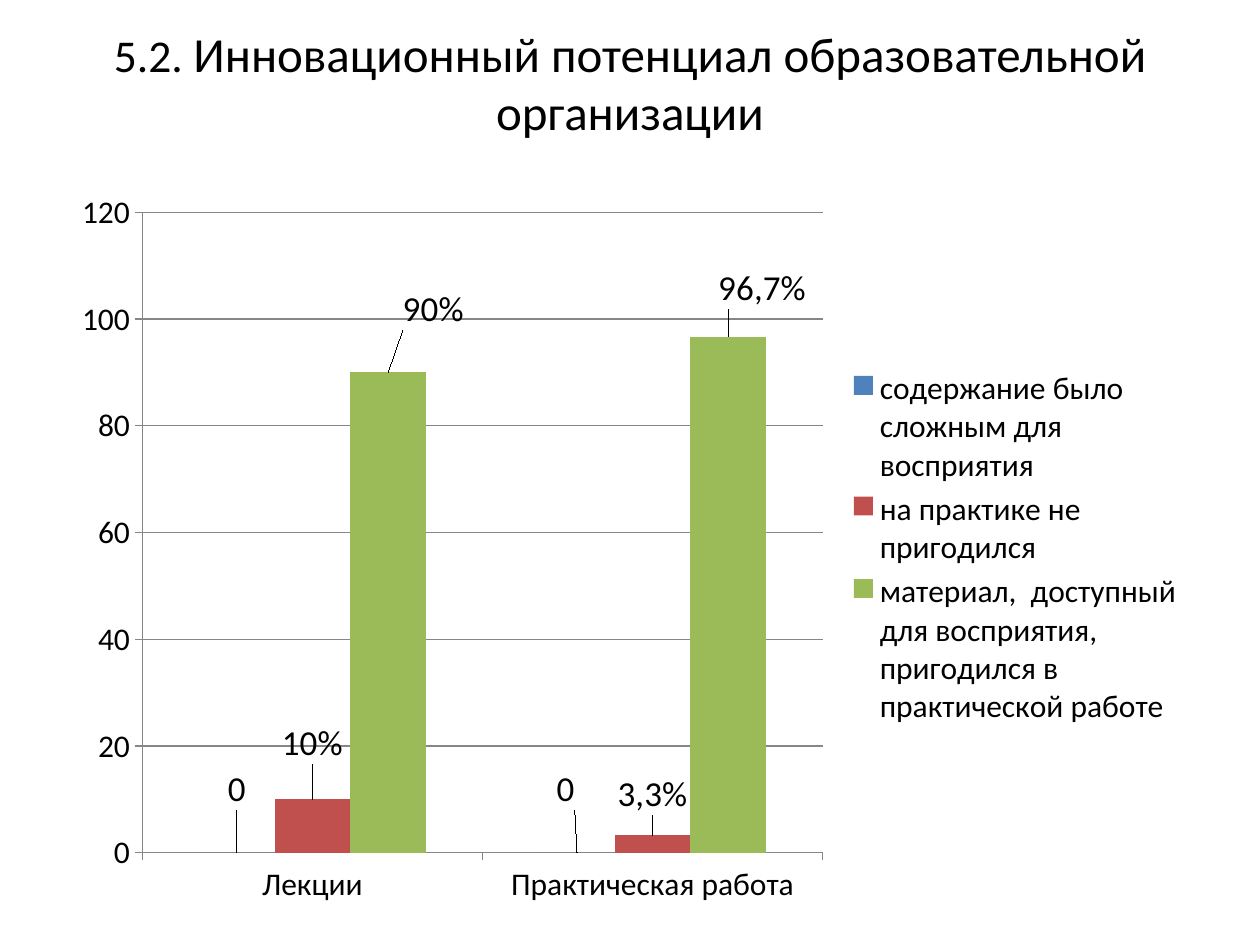
from dataclasses import dataclass

from lxml.etree import SubElement
from pptx import Presentation
from pptx.chart.data import CategoryChartData as ChartData
from pptx.dml.color import RGBColor as RGB
from pptx.enum.chart import XL_CHART_TYPE as Kind
from pptx.enum.chart import XL_LABEL_POSITION as Spot
from pptx.enum.chart import XL_LEGEND_POSITION as Side
from pptx.enum.chart import XL_TICK_MARK as Tick
from pptx.enum.text import MSO_ANCHOR as Anchor
from pptx.enum.text import PP_ALIGN as Align
from pptx.oxml.ns import qn
from pptx.util import Inches, Pt


@dataclass(frozen=True)
class Theme:
    font: str = "Calibri"
    ink: RGB = RGB(0, 0, 0)
    line: RGB = RGB(0x86, 0x86, 0x86)
    number: int = 26
    title: int = 28
    chart: int = 18
    label: int = 20


THEME = Theme()
CATS = ["Лекции", "Практическая работа"]
# name, colour, values, label texts (None shows the value), label shifts
SERIES = [
    ("содержание было сложным для восприятия", "4F81BD",
     (0, 0), (None, None), ((0, -0.05), (-0.01, -0.05))),
    ("на практике не пригодился", "C0504D",
     (10, 3.3), ("10%", "3,3%"), ((0, -0.04), (0, -0.02))),
    ("материал,  доступный для восприятия, пригодился в практической работе",
     "9BBB59", (90, 96.7), ("90%", "96,7%"), ((0.04, -0.05), (0.03, -0.03))),
]


def style(font, size):
    font.name = THEME.font
    font.size = Pt(size)
    font.color.rgb = THEME.ink
    font.bold = False


def place(node, index, **values):
    """Give a chart part a manual layout, as fractions of the chart."""
    for old in node.findall(qn("c:layout")):
        node.remove(old)
    layout = SubElement(node, qn("c:layout"))
    node.insert(index, layout)
    manual = SubElement(layout, qn("c:manualLayout"))
    for key, value in values.items():
        SubElement(manual, qn(f"c:{key}")).set("val", str(value))


def add_title(slide, runs):
    box = slide.shapes.add_textbox(
        Inches(0.2), Inches(0.3), Inches(9.6), Inches(0.7))
    frame = box.text_frame
    frame.word_wrap = True
    frame.vertical_anchor = Anchor.MIDDLE
    para = frame.paragraphs[0]
    para.alignment = Align.CENTER
    for text, size in runs:
        run = para.add_run()
        run.text = text
        style(run.font, size)


def set_label(series, index, text, shift):
    label = series.points[index].data_label
    if text:
        run = label.text_frame.paragraphs[0].add_run()
        run.text = text
        style(run.font, THEME.label)
    else:
        style(label.font, THEME.label)
    label.position = Spot.OUTSIDE_END
    node = series.data_labels._element.findall(qn("c:dLbl"))[index]
    place(node, 1, x=shift[0], y=shift[1])


def style_series(series, colour, texts, shifts):
    series.format.fill.solid()
    series.format.fill.fore_color.rgb = RGB.from_string(colour)
    series.invert_if_negative = False
    labels = series.data_labels
    labels.show_value = True
    style(labels.font, THEME.label)
    for index, (text, shift) in enumerate(zip(texts, shifts)):
        set_label(series, index, text, shift)


def style_axes(chart):
    value = chart.value_axis
    value.minimum_scale, value.maximum_scale, value.major_unit = 0, 120, 20
    value.has_major_gridlines = True
    for axis in (value, chart.category_axis):
        axis.major_tick_mark = Tick.OUTSIDE
        style(axis.tick_labels.font, THEME.chart)
    for part in (value, chart.category_axis, value.major_gridlines):
        part.format.line.color.rgb = THEME.line
        part.format.line.width = Pt(0.75)


def add_bars(slide):
    data = ChartData()
    data.categories = CATS
    for name, _, values, _, _ in SERIES:
        data.add_series(name, values)
    chart = slide.shapes.add_chart(
        Kind.COLUMN_CLUSTERED, Inches(0.5), Inches(1.39),
        Inches(9), Inches(5.91), data).chart
    style(chart.font, THEME.chart)
    chart.has_title = False
    chart.has_legend = True
    chart.legend.position = Side.RIGHT
    chart.legend.include_in_layout = False
    style(chart.legend.font, THEME.chart)
    style_axes(chart)
    plot = chart.plots[0]
    plot.gap_width = 150
    plot.overlap = 0
    plot.vary_by_categories = False
    for series, (_, colour, _, texts, shifts) in zip(plot.series, SERIES):
        style_series(series, colour, texts, shifts)
    area = chart._chartSpace.find(f".//{qn('c:plotArea')}")
    place(area, 0, layoutTarget="inner", xMode="edge", yMode="edge",
          x=0.07, y=0.05, w=0.6, h=0.86)


def main():
    deck = Presentation()
    deck.slide_width, deck.slide_height = Inches(10), Inches(7.5)
    slide = deck.slides.add_slide(deck.slide_layouts[6])
    add_title(slide, [
        ("5.2. ", THEME.number),
        ("Инновационный потенциал образовательной организации", THEME.title),
    ])
    add_bars(slide)
    deck.save("out.pptx")


if __name__ == "__main__":
    main()
